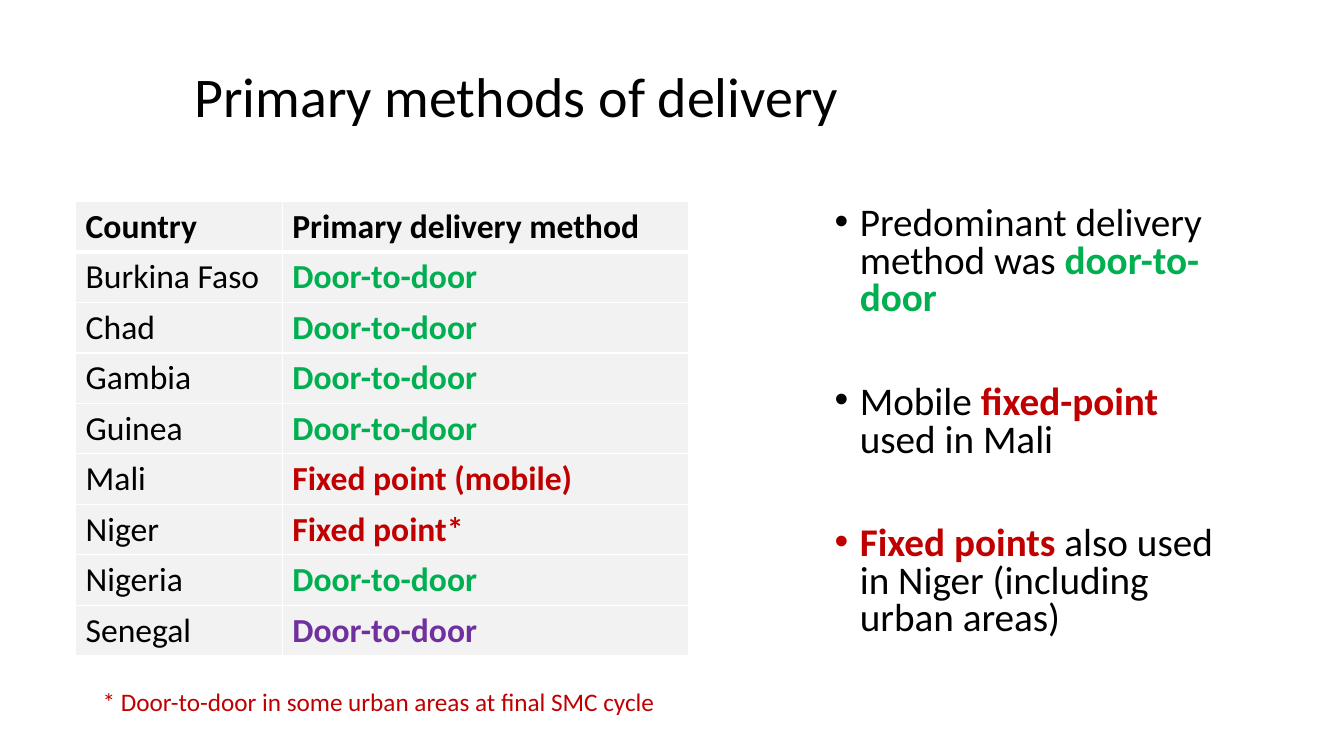
from lxml import etree
from pptx import Presentation
from pptx.dml.color import RGBColor
from pptx.enum.text import MSO_ANCHOR
from pptx.oxml.ns import qn
from pptx.util import Inches, Pt

MIDDLE = MSO_ANCHOR.MIDDLE
FONT = "Calibri"
COLORS = {
    "ink": "000000",
    "green": "00B050",
    "red": "C00000",
    "purple": "7030A0",
    "cell": "F2F2F2",
    "rule": "FFFFFF",
}
DOOR = ("Door-to-door", "green")
ROWS = [
    ("Country", "Primary delivery method", "ink"),
    ("Burkina Faso", *DOOR),
    ("Chad", *DOOR),
    ("Gambia", *DOOR),
    ("Guinea", *DOOR),
    ("Mali", "Fixed point (mobile)", "red"),
    ("Niger", "Fixed point*", "red"),
    ("Nigeria", *DOOR),
    ("Senegal", "Door-to-door", "purple"),
]
POINTS = [
    [("Predominant delivery method was ", "ink"), ("door-to-door", "green")],
    [("Mobile ", "ink"), ("fixed-point", "red"), (" used in Mali", "ink")],
    [("Fixed points ", "red"),
     ("also used in Niger (including urban areas)", "ink")],
]


def rgb(name):
    return RGBColor.from_string(COLORS[name])


def style(run, size, color="ink", bold=False):
    font = run.font
    font.name, font.size, font.bold = FONT, Pt(size), bold
    font.color.rgb = rgb(color)


def add_box(slide, left, top, width, height):
    box = slide.shapes.add_textbox(*map(Inches, (left, top, width, height)))
    box.text_frame.word_wrap = True
    return box.text_frame


def add_line(slide, place, text, size, color="ink"):
    """Add a text box of one paragraph and return its frame."""
    frame = add_box(slide, *place)
    frame.text = text
    style(frame.paragraphs[0].runs[0], size, color)
    return frame


def add_bullet(para):
    props = para._p.get_or_add_pPr()
    props.set("marL", str(Inches(0.25)))
    props.set("indent", str(-Inches(0.25)))
    etree.SubElement(props, qn("a:buFont")).set("typeface", "Arial")
    etree.SubElement(props, qn("a:buChar")).set("char", "•")


def add_points(slide, place, points):
    frame = add_box(slide, *place)
    for i, parts in enumerate(points):
        para = frame.add_paragraph() if i else frame.paragraphs[0]
        add_bullet(para)
        para.line_spacing = 0.8
        if i:
            para.space_before = Pt(47)
        for text, color in parts:
            run = para.add_run()
            run.text = text
            style(run, 28, color, color != "ink")


def add_rules(cell, widths):
    """Draw the cell's left, right, top and bottom borders, in points."""
    props = cell._tc.get_or_add_tcPr()
    for side, width in zip("LRTB", widths):
        line = etree.SubElement(props, qn(f"a:ln{side}"), w=str(Pt(width)))
        fill = etree.SubElement(line, qn("a:solidFill"))
        etree.SubElement(fill, qn("a:srgbClr"), val=COLORS["rule"])


def add_grid(slide, left, top, cols, pitch, rows):
    place = map(Inches, (left, top, sum(cols), pitch * len(rows)))
    table = slide.shapes.add_table(len(rows), len(cols), *place).table
    table.horz_banding = False
    for col, width in zip(table.columns, cols):
        col.width = Inches(width)
    for r, (country, method, color) in enumerate(rows):
        pairs = [(country, "ink", r == 0), (method, color, True)]
        for c, (text, tint, bold) in enumerate(pairs):
            cell = table.cell(r, c)
            cell.text = text
            style(cell.text_frame.paragraphs[0].runs[0], 24, tint, bold)
            add_rules(cell, (1, 1, 3 if r == 1 else 1, 3 if r == 0 else 1))
            cell.fill.solid()
            cell.fill.fore_color.rgb = rgb("cell")


def main():
    deck = Presentation()
    deck.slide_width, deck.slide_height = Inches(13.33), Inches(7.5)
    slide = deck.slides.add_slide(deck.slide_layouts[6])
    title = add_line(slide, (1.83, 0.26, 11.5, 1.45),
                     "Primary methods of delivery", 40)
    title.vertical_anchor = MIDDLE
    title.paragraphs[0].line_spacing = 0.9
    add_points(slide, (8.18, 2, 4.23, 4.76), POINTS)
    add_grid(slide, 0.75, 2, (2.05, 4.03), 0.5, ROWS)
    add_line(slide, (0.92, 6.76, 6, 0.4),
             "* Door-to-door in some urban areas at final SMC cycle", 18, "red")
    deck.save("out.pptx")


if __name__ == "__main__":
    main()
